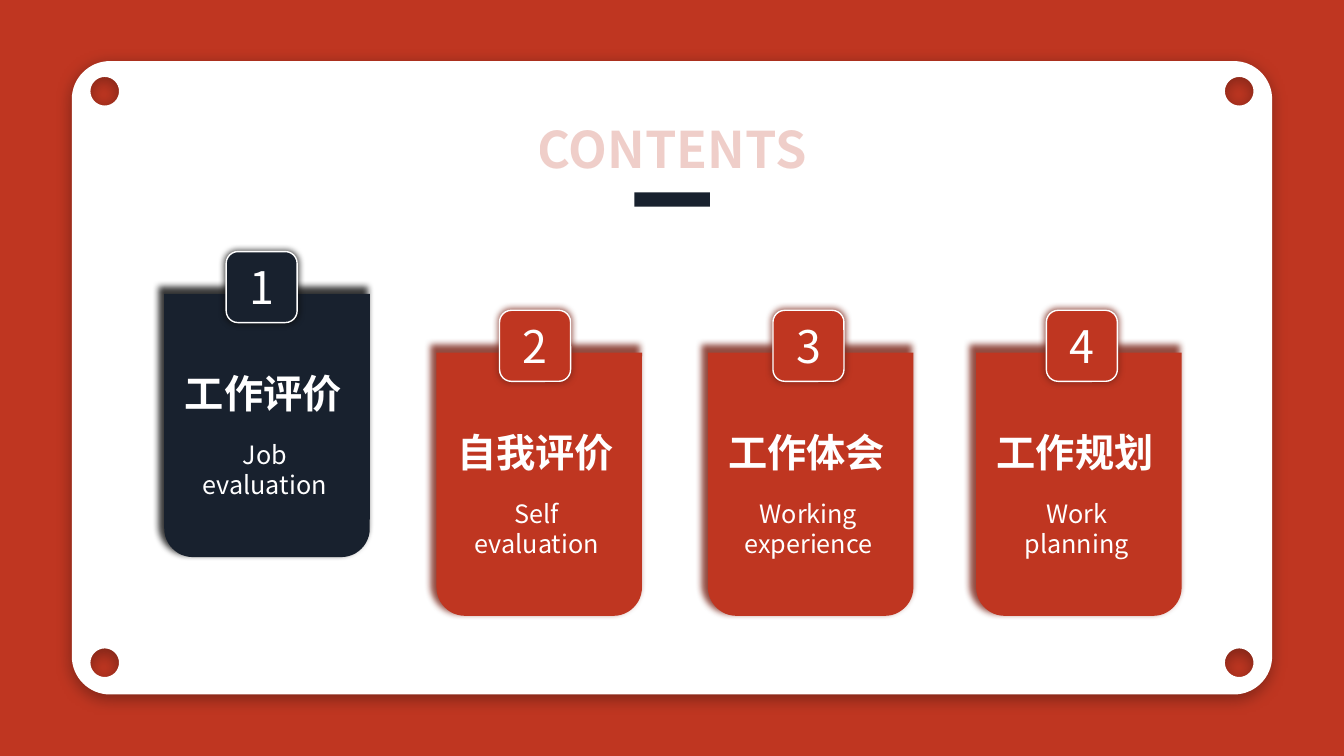
from lxml import etree
from pptx import Presentation
from pptx.dml.color import RGBColor
from pptx.enum.shapes import MSO_SHAPE
from pptx.enum.text import MSO_ANCHOR, PP_ALIGN
from pptx.oxml.ns import qn
from pptx.util import Cm, Pt

RECTANGLE = MSO_SHAPE.RECTANGLE
ROUNDED = MSO_SHAPE.ROUNDED_RECTANGLE
ROUND_TOP = MSO_SHAPE.ROUND_2_SAME_RECTANGLE
TOP, MIDDLE = MSO_ANCHOR.TOP, MSO_ANCHOR.MIDDLE
LEFT, CENTER = PP_ALIGN.LEFT, PP_ALIGN.CENTER
FONT = "Noto Sans CJK SC"
RED, NAVY, WHITE = "BF3621", "18212E", "FFFFFF"
DARK_RED, NEAR_BLACK = "7B2518", "0D0D0D"
SECTIONS = [
    (4.14, "工作评价", "Job\nevaluation"),
    (11, "自我评价", "Self evaluation"),
    (17.84, "工作体会", "Working experience"),
    (24.6, "工作规划", "Work planning"),
]
BADGE_LEFT, BADGE_PITCH = 5.7, 6.89
FIRST_TOP, OTHER_TOP = 7.41, 8.89
BADGE_RISE = 1.07
CURVE = 0.45


def color(hex_code):
    """Return the colour for a hex string."""
    return RGBColor.from_string(hex_code)


def paint(shape, fill, line=None):
    """Give a shape a solid fill, an optional thin line and no shadow."""
    shape.shadow.inherit = False
    shape.fill.solid()
    shape.fill.fore_color.rgb = color(fill)
    if line:
        shape.line.color.rgb = color(line)
        shape.line.width = Pt(1)
    else:
        shape.line.fill.background()


def add_shadow(shape, hex_code, opacity, blur, distance=0, angle=0, scale=100):
    """Add an outer shadow, with blur and distance in points."""
    effects = shape._element.spPr.find(qn("a:effectLst"))
    shadow = etree.SubElement(
        effects, qn("a:outerShdw"), blurRad=str(Pt(blur)), dist=str(Pt(distance)),
        dir=str(angle * 60000), sx=str(scale * 1000), sy=str(scale * 1000),
        algn="ctr", rotWithShape="0")
    tint = etree.SubElement(shadow, qn("a:srgbClr"), val=hex_code)
    etree.SubElement(tint, qn("a:alpha"), val=str(opacity * 1000))


def write(shape, text, size, bold=False, align=CENTER, anchor=TOP, hex_code=WHITE):
    """Write text into a shape and format its runs."""
    frame = shape.text_frame
    frame.text = text
    frame.word_wrap = True
    frame.vertical_anchor = anchor
    for paragraph in frame.paragraphs:
        paragraph.alignment = align
        for run in paragraph.runs:
            run.font.size = Pt(size)
            run.font.bold = bold
            run.font.name = FONT
            run.font.color.rgb = color(hex_code)
            etree.SubElement(run.font._element, qn("a:ea"), typeface=FONT)


def add_text(shapes, box, text, size, **style):
    """Add a text box at a box given in centimetres."""
    write(shapes.add_textbox(*map(Cm, box)), text, size, **style)


def rounded_outline(left, top, width, height, radius):
    """Return a start point and the segments of a rounded box, three points a curve."""
    right, bottom = left + width, top + height
    corners = [(left, top, 0, 1, 1, 0), (right, top, -1, 0, 0, 1),
               (right, bottom, 0, -1, -1, 0), (left, bottom, 1, 0, 0, -1)]
    segments = []
    for x, y, in_x, in_y, out_x, out_y in corners:
        near = radius * CURVE
        segments.append([(x + in_x * radius, y + in_y * radius)])
        segments.append([(x + in_x * near, y + in_y * near),
                         (x + out_x * near, y + out_y * near),
                         (x + out_x * radius, y + out_y * radius)])
    start = segments.pop(0)[0]
    if width == 2 * radius:
        segments = [segment for segment in segments if len(segment) == 3]
    return start, segments


def bend(shape, segments):
    """Turn every three-point segment of a freeform into a curve."""
    lines = iter(list(shape._element.spPr.iter(qn("a:lnTo"))))
    for segment in segments:
        first, *others = [next(lines) for _ in segment]
        if others:
            first.tag = qn("a:cubicBezTo")
        for other in others:
            first.append(other[0])
            other.getparent().remove(other)


def add_panel(slide, left, top, width, height):
    """Draw the white rounded panel with a punched hole in each corner."""
    radius, inset, size = 0.96, 0.47, 0.72
    outlines = [rounded_outline(left, top, width, height, radius)]
    for x in (left + inset, left + width - inset - size):
        for y in (top + 0.4, top + height - 1.16):
            outlines.append(rounded_outline(x, y, size, size, size / 2))
    builder = slide.shapes.build_freeform(*map(Cm, outlines[0][0]))
    for index, (start, segments) in enumerate(outlines):
        if index:
            builder.move_to(*map(Cm, start))
        points = [(Cm(x), Cm(y)) for segment in segments for x, y in segment]
        builder.add_line_segments(points, close=True)
    panel = builder.convert_to_shape()
    bend(panel, [segment for _, segments in outlines for segment in segments])
    paint(panel, WHITE)
    add_shadow(panel, DARK_RED, 95, 11, 3, 90)


def add_heading(slide, left, top, width, height):
    """Place the faded title in front of the panel, with a bar below it."""
    title = slide.shapes.title
    title.left, title.top, title.width, title.height = map(
        Cm, (left, top, width, height))
    write(title, "CONTENTS", 36, bold=True, hex_code=RED)
    tint = title.text_frame.paragraphs[0].runs[0].font._element.find(
        ".//" + qn("a:srgbClr"))
    etree.SubElement(tint, qn("a:alpha"), val="24000")
    slide.shapes._spTree.append(title._element)
    bar_width = 1.9
    bar = slide.shapes.add_shape(
        RECTANGLE, Cm(left + (width - bar_width) / 2), Cm(top + 2.01),
        Cm(bar_width), Cm(0.36))
    paint(bar, NAVY)


def add_card(slide, left, top, name, caption, fill, shade):
    """Draw a section card, grouped with its name and caption."""
    shapes = slide.shapes.add_group_shape().shapes
    card = shapes.add_shape(ROUND_TOP, *map(Cm, (left, top, 5.18, 6.63)))
    card.adjustments[0] = 0.139
    card._element.spPr.xfrm.set("flipV", "1")
    paint(card, fill)
    add_shadow(card, shade, 81, 5, scale=102)
    add_text(shapes, (left + 0.27, top + 1.78, 4.65, 1.45), name, 28,
             bold=True, align=LEFT)
    add_text(shapes, (left + 0.53, top + 3.53, 4.01, 1.8), caption, 18)


def add_badge(slide, left, top, number, fill, shade):
    """Draw the numbered badge of a card."""
    badge = slide.shapes.add_shape(ROUNDED, *map(Cm, (left, top, 1.79, 1.79)))
    paint(badge, fill, WHITE)
    add_shadow(badge, shade, 81, 5, scale=102)
    write(badge, str(number), 32, anchor=MIDDLE)


def main():
    """Build the contents slide."""
    presentation = Presentation()
    presentation.slide_width, presentation.slide_height = Cm(33.87), Cm(19.05)
    slide = presentation.slides.add_slide(presentation.slide_layouts[5])
    slide.background.fill.solid()
    slide.background.fill.fore_color.rgb = color(RED)
    add_panel(slide, 1.81, 1.54, 30.25, 15.96)
    for index, (left, name, caption) in enumerate(SECTIONS):
        first = index == 0
        top = FIRST_TOP if first else OTHER_TOP
        colors = (NAVY, NEAR_BLACK) if first else (RED, DARK_RED)
        add_card(slide, left, top, name, caption, *colors)
        add_badge(slide, BADGE_LEFT + index * BADGE_PITCH, top - BADGE_RISE,
                  index + 1, *colors)
    add_heading(slide, 13.04, 2.84, 7.8, 1.8)
    presentation.save("out.pptx")


if __name__ == "__main__":
    main()
